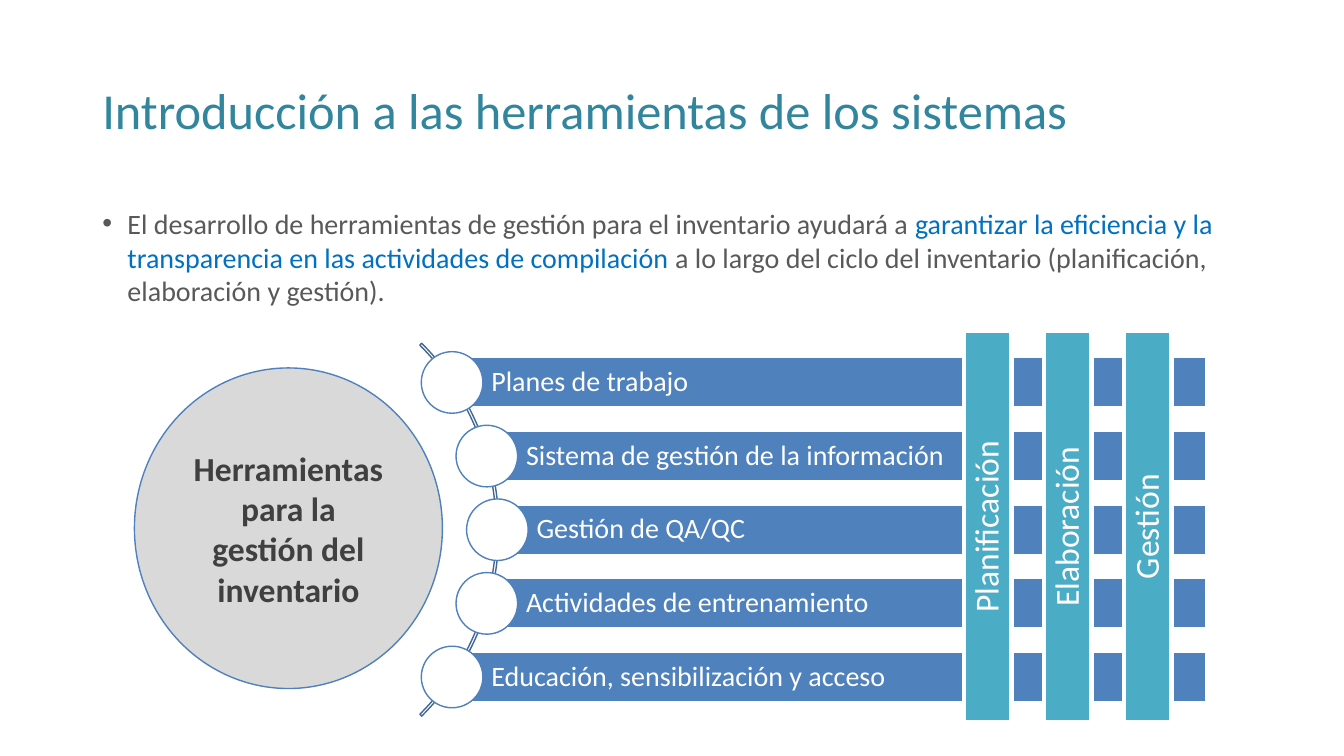
import math
import pptx
import pptx.util
import pptx.dml.color
import pptx.enum.shapes
import pptx.enum.text
import pptx.oxml.ns
from lxml import etree

Pt = pptx.util.Pt
RGB = pptx.dml.color.RGBColor
MSO = pptx.enum.shapes.MSO_SHAPE
ALIGN = pptx.enum.text.PP_ALIGN
ANCHOR = pptx.enum.text.MSO_ANCHOR
qn = pptx.oxml.ns.qn

FONT = "Calibri"
WHITE = RGB(0xFF, 0xFF, 0xFF)
TITLE_TEAL = RGB(0x31, 0x85, 0x9C)
BODY_GRAY = RGB(0x59, 0x59, 0x59)
ACCENT = RGB(0x00, 0x70, 0xC0)
BLUE = RGB(0x4F, 0x81, 0xBD)
ARC_BLUE = RGB(0x3F, 0x67, 0x97)
TEAL = RGB(0x4B, 0xAC, 0xC6)
LIGHT_GRAY = RGB(0xD9, 0xD9, 0xD9)
DARK_GRAY = RGB(0x40, 0x40, 0x40)

TITLE = "Introducción a las herramientas de los sistemas"
BODY = [
    ("El desarrollo de herramientas de gestión para el inventario ayudará a ", BODY_GRAY),
    ("garantizar la eficiencia y la transparencia en las actividades de compilación ", ACCENT),
    ("a lo largo del ciclo del inventario (planificación, elaboración y gestión).", BODY_GRAY),
]
HUB = "Herramientas para la gestión del inventario"
TOOLS = [
    "Planes de trabajo",
    "Sistema de gestión de la información",
    "Gestión de QA/QC",
    "Actividades de entrenamiento",
    "Educación, sensibilización y acceso",
]
PHASES = ["Planificación", "Elaboración", "Gestión"]

ARC_X, ARC_Y, ARC_R = 168.1, 378.4, 188.3
NODE_R, NODE_D = 187.2, 44
ROW_PITCH, BAR_H, BAR_RIGHT = 52.6, 35.2, 861.1
PHASE_X, PHASE_Y, PHASE_PITCH = 705.6, 376.2, 57.2
PHASE_LEN, PHASE_W = 279.4, 33.8


def style(r, size, color, bold=False):
    r.font.name = FONT
    r.font.size = Pt(size)
    r.font.color.rgb = color
    r.font.bold = bold


def add_shape(s, kind, x, y, w, h, fill, line, weight=1):
    sp = s.shapes.add_shape(kind, Pt(x), Pt(y), Pt(w), Pt(h))
    sp.shadow.inherit = False
    if fill is None:
        sp.fill.background()
    else:
        sp.fill.solid()
        sp.fill.fore_color.rgb = fill
    sp.line.color.rgb = line
    sp.line.width = Pt(weight)
    return sp


def add_label(sp, text, size, color, align, spacing=0.9, bold=False, insets=None):
    tf = sp.text_frame
    tf.word_wrap = True
    tf.vertical_anchor = ANCHOR.MIDDLE
    if insets:
        tf.margin_left, tf.margin_top, tf.margin_right, tf.margin_bottom = map(Pt, insets)
    p = tf.paragraphs[0]
    p.text = text
    p.alignment = align
    p.line_spacing = spacing
    style(p.runs[0], size, color, bold)


def add_body(s):
    tf = s.shapes.add_textbox(Pt(66), Pt(144), Pt(828), Pt(343)).text_frame
    tf.word_wrap = True
    p = tf.paragraphs[0]
    pPr = p._p.get_or_add_pPr()
    pPr.set("marL", str(Pt(18)))
    pPr.set("indent", str(-Pt(18)))
    color = etree.SubElement(pPr, qn("a:buClr"))
    etree.SubElement(color, qn("a:srgbClr")).set("val", str(BODY_GRAY))
    etree.SubElement(pPr, qn("a:buFont")).set("typeface", "Arial")
    etree.SubElement(pPr, qn("a:buChar")).set("char", "•")
    p.space_after = Pt(24)
    for text, color in BODY:
        r = p.add_run()
        r.text = text
        style(r, 20, color)


def add_tools(s):
    arc = add_shape(s, MSO.BLOCK_ARC, ARC_X - ARC_R, ARC_Y - ARC_R,
                    2 * ARC_R, 2 * ARC_R, None, ARC_BLUE)
    for i, value in enumerate((189, 27, 0.005)):
        arc.adjustments[i] = value
    for i, tool in enumerate(TOOLS):
        dy = (i - (len(TOOLS) - 1) / 2) * ROW_PITCH
        x = ARC_X + math.sqrt(NODE_R ** 2 - dy ** 2)
        y = ARC_Y + dy
        bar = add_shape(s, MSO.RECTANGLE, x, y - BAR_H / 2, BAR_RIGHT - x, BAR_H, BLUE, WHITE)
        add_label(bar, tool, 20, WHITE, ALIGN.LEFT, insets=(28, 4, 4, 4))
        add_shape(s, MSO.OVAL, x - NODE_D / 2, y - NODE_D / 2, NODE_D, NODE_D, WHITE, BLUE)


def add_phases(s):
    for i, phase in enumerate(PHASES):
        x = PHASE_X + i * PHASE_PITCH
        sp = add_shape(s, MSO.RECTANGLE, x - PHASE_LEN / 2, PHASE_Y - PHASE_W / 2,
                       PHASE_LEN, PHASE_W, TEAL, WHITE, 3)
        sp.rotation = 270
        add_label(sp, phase, 24, WHITE, ALIGN.CENTER, insets=(3, 3, 3, 3))


def main():
    prs = pptx.Presentation()
    prs.slide_width, prs.slide_height = Pt(960), Pt(540)
    s = prs.slides.add_slide(prs.slide_layouts[6])
    title = s.shapes.add_textbox(Pt(66), Pt(28.8), Pt(828), Pt(104.4))
    add_label(title, TITLE, 36, TITLE_TEAL, ALIGN.LEFT)
    add_body(s)
    add_tools(s)
    hub = add_shape(s, MSO.OVAL, 96, 262.8, 220, 229, LIGHT_GRAY, BLUE)
    add_label(hub, HUB, 24, DARK_GRAY, ALIGN.CENTER, spacing=1.0, bold=True)
    add_phases(s)
    prs.save("out.pptx")


if __name__ == "__main__":
    main()
